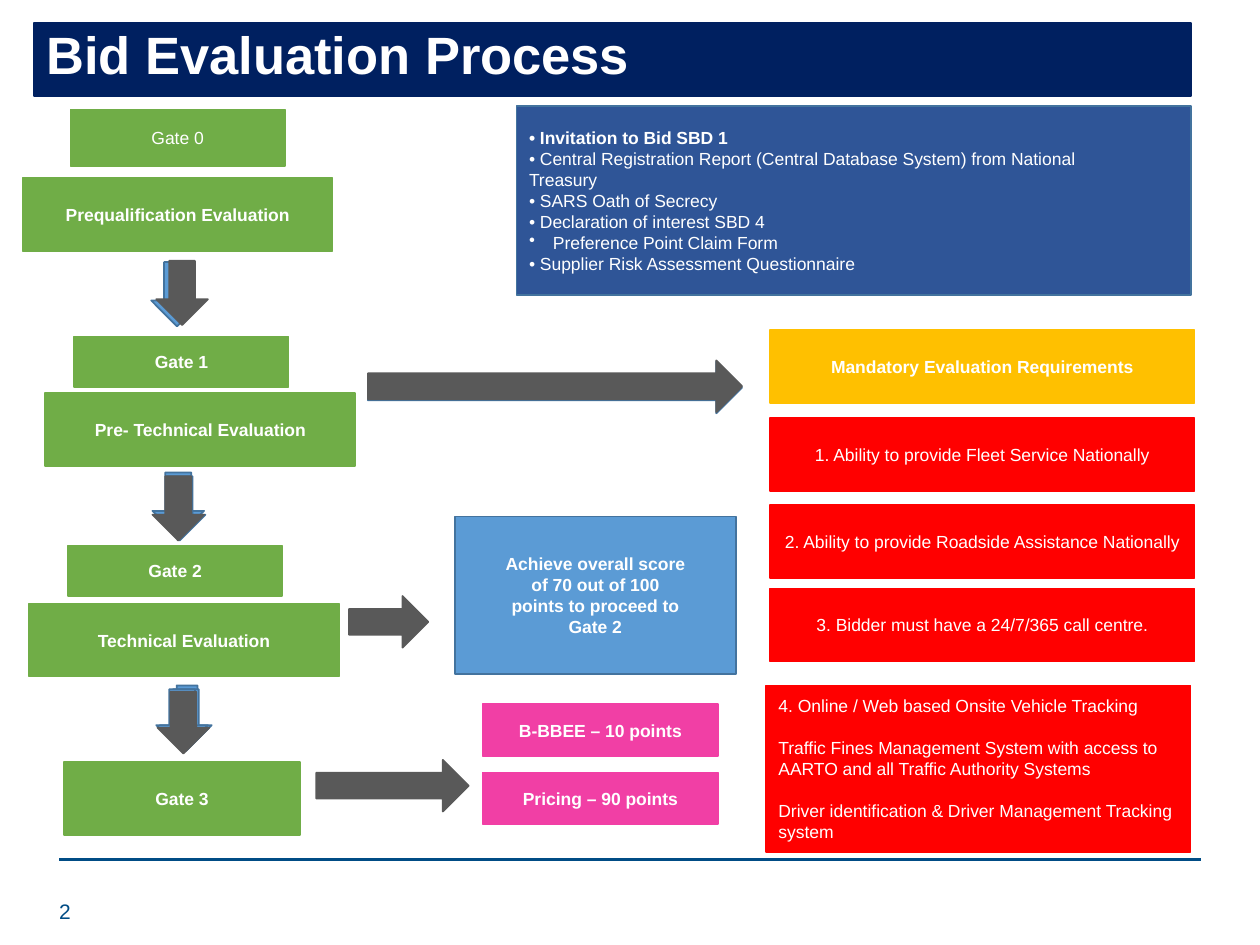
from lxml import etree
from pptx import Presentation
from pptx.dml.color import RGBColor
from pptx.enum.shapes import MSO_CONNECTOR, MSO_SHAPE
from pptx.enum.text import MSO_ANCHOR, PP_ALIGN
from pptx.oxml.ns import qn
from pptx.util import Inches, Pt

COLORS = {
    "white": "FFFFFF", "navy": "002060", "footer": "004C85",
    "gate": "70AD47", "documents": "2F5597", "score": "5B9BD5",
    "outline": "43739E", "heading": "FFC000", "requirement": "FF0000",
    "points": "F13FA5", "arrow": "595959",
}


def color(name):
    return RGBColor.from_string(COLORS[name])


class ProcessSlide:
    font = "Arial"
    text_size = 10

    def __init__(self, slide):
        self.slide = slide

    def fill_text(self, frame, lines, ink="white", size=text_size, bold=False,
                  align=PP_ALIGN.CENTER, anchor=MSO_ANCHOR.MIDDLE, gap=0):
        frame.word_wrap = True
        frame.vertical_anchor = anchor
        frame.text = "\n".join(lines)
        for index, paragraph in enumerate(frame.paragraphs):
            paragraph.alignment = align
            if gap and index:
                paragraph.space_before = Pt(gap)
            for run in paragraph.runs:
                run.font.name = self.font
                run.font.size = Pt(size)
                run.font.bold = bold
                run.font.color.rgb = color(ink)
        return frame.paragraphs

    def shape(self, kind, at, fill, outline=None):
        item = self.slide.shapes.add_shape(kind, *map(Inches, at))
        item.shadow.inherit = False
        item.fill.solid()
        item.fill.fore_color.rgb = color(fill)
        item.line.color.rgb = color(outline or fill)
        item.line.width = Pt(1)
        return item

    def box(self, lines, at, fill, outline=None, **style):
        item = self.shape(MSO_SHAPE.RECTANGLE, at, fill, outline)
        return self.fill_text(item.text_frame, lines, **style)

    def arrow(self, at, fill="arrow", outline=None, rotation=0):
        self.shape(MSO_SHAPE.DOWN_ARROW, at, fill, outline).rotation = rotation

    def label(self, text, at, **style):
        item = self.slide.shapes.add_textbox(*map(Inches, at))
        self.fill_text(item.text_frame, [text], **style)

    def rule(self, left, right, y, ink, width):
        line = self.slide.shapes.add_connector(
            MSO_CONNECTOR.STRAIGHT, *map(Inches, (left, y, right, y)))
        line.line.color.rgb = color(ink)
        line.line.width = Pt(width)
        etree.SubElement(line._element.spPr, qn("a:effectLst"))

    def bullet(self, paragraph, indent):
        props = paragraph._p.get_or_add_pPr()
        props.set("marL", str(Inches(indent)))
        props.set("indent", str(-Inches(indent)))
        etree.SubElement(props, qn("a:buChar")).set("char", "•")


def main():
    prs = Presentation()
    prs.slide_width, prs.slide_height = Inches(10), Inches(7.5)
    page = ProcessSlide(prs.slides.add_slide(prs.slide_layouts[6]))

    # Title and footer
    title, = page.box(["Bid Evaluation Process"], (0.27, 0.18, 9.18, 0.58), "navy",
                      size=30, bold=True, align=PP_ALIGN.LEFT,
                      anchor=MSO_ANCHOR.TOP)
    title.line_spacing = 0.9
    page.rule(0.47, 9.53, 6.82, "footer", 2)
    page.label("2", (0.37, 7.03, 2.25, 0.4), ink="footer", size=12,
               align=PP_ALIGN.LEFT)

    # Gates and their evaluation stages
    gates = [
        ("Gate 0", (0.56, 0.87, 1.7, 0.45), False),
        ("Prequalification Evaluation", (0.18, 1.41, 2.46, 0.58), True),
        ("Gate 1", (0.59, 2.67, 1.7, 0.4), True),
        ("Pre- Technical Evaluation", (0.36, 3.12, 2.46, 0.58), True),
        ("Gate 2", (0.54, 4.33, 1.7, 0.4), True),
        ("Technical Evaluation", (0.23, 4.79, 2.46, 0.58), True),
        ("Gate 3", (0.51, 6.05, 1.87, 0.58), True),
    ]
    for text, at, bold in gates:
        page.box([text], at, "gate", bold=bold)

    # Documents for gate 0
    documents = page.box([
        "• Invitation to Bid SBD 1",
        "• Central Registration Report (Central Database System) from National",
        "Treasury",
        "• SARS Oath of Secrecy",
        "• Declaration of interest SBD 4",
        "Preference Point Claim Form",
        "• Supplier Risk Assessment Questionnaire",
    ], (4.1, 0.84, 5.35, 1.5), "documents", "outline", align=PP_ALIGN.LEFT)
    documents[0].runs[0].font.bold = True
    page.bullet(documents[5], 0.19)

    # Mandatory requirements for gate 1
    left, width, height = 6.11, 3.37, 0.58
    page.box(["Mandatory Evaluation Requirements"], (left, 2.62, width, height),
             "heading", bold=True)
    requirements = [
        ("1. Ability to provide Fleet Service Nationally", 3.32),
        ("2. Ability to provide Roadside Assistance Nationally", 4.01),
        ("3. Bidder must have a 24/7/365 call centre.", 4.67),
    ]
    for text, top in requirements:
        page.box([text], (left, top, width, height), "requirement")
    page.box([
        "4. Online / Web based Onsite Vehicle Tracking",
        "Traffic Fines Management System with access to AARTO and all "
        "Traffic Authority Systems",
        "Driver identification & Driver Management Tracking system",
    ], (6.08, 5.44, width, 1.32), "requirement", align=PP_ALIGN.LEFT, gap=12)

    # Score for gate 2 and points for gate 3
    page.box(["Achieve overall score", "of 70 out of 100",
              "points to proceed to", "Gate 2"],
             (3.61, 4.1, 2.23, 1.25), "score", "outline", bold=True)
    for text, top in [("B-BBEE – 10 points", 5.59), ("Pricing – 90 points", 6.13)]:
        page.box([text], (3.83, top, 1.87, 0.41), "points", bold=True)

    # Blue arrows showing behind the grey ones
    down_backs = [(1.2, 2.08, 0.41, 0.51), (1.21, 3.75, 0.41, 0.51),
                  (1.22, 3.78, 0.41, 0.51), (1.32, 5.44, 0.33, 0.51),
                  (1.27, 5.47, 0.41, 0.49), (1.24, 5.47, 0.41, 0.49)]
    for at in down_backs:
        page.arrow(at, "score", "outline")
    page.arrow((4.2, 1.59, 0.41, 2.97), "score", "outline", rotation=270)

    # Grey arrows: down to the next gate, right to the criteria
    for left, top, height in [(1.24, 2.07, 0.51), (1.21, 3.78, 0.51),
                              (1.25, 5.49, 0.49)]:
        page.arrow((left, top, 0.41, height))
    for left, top, length in [(4.2, 1.58, 2.97), (2.88, 4.62, 0.63),
                              (2.91, 5.63, 1.21)]:
        page.arrow((left, top, 0.41, length), rotation=270)

    prs.save("out.pptx")


if __name__ == "__main__":
    main()
